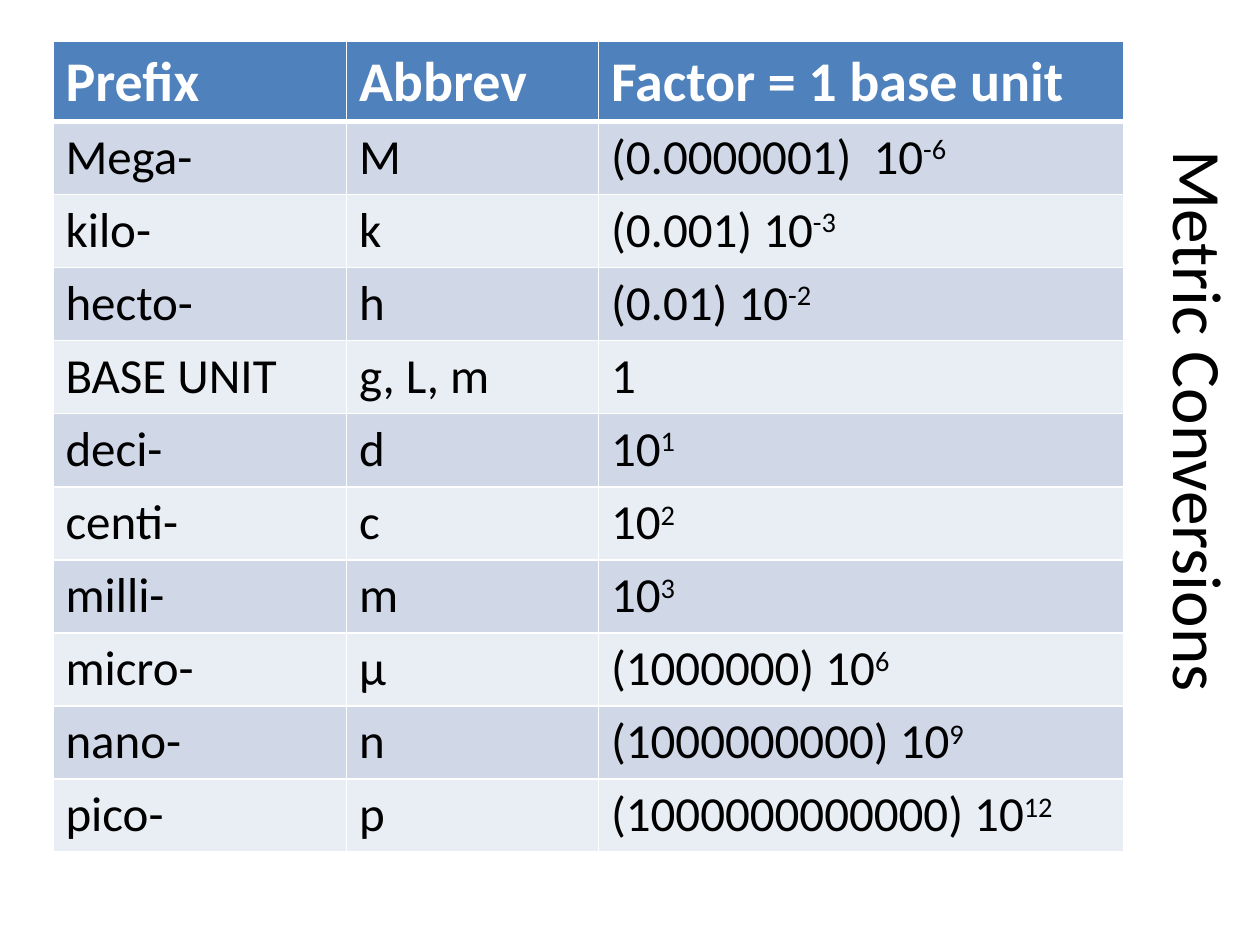
from lxml import etree
from pptx import Presentation
from pptx.dml.color import RGBColor
from pptx.enum.text import MSO_ANCHOR, PP_ALIGN
from pptx.oxml.ns import qn
from pptx.util import Inches, Pt

MIDDLE = MSO_ANCHOR.MIDDLE
CENTER = PP_ALIGN.CENTER
FONT = "Calibri"
COLORS = {
    "text": "000000",
    "header text": "FFFFFF",
    "header": "4F81BD",
    "odd row": "D0D8E8",
    "even row": "E9EDF4",
    "border": "FFFFFF",
}
HEADER_FORMAT = {"size": Pt(32), "bold": True}
BODY_FORMAT = {"size": Pt(28), "bold": False}
TITLE_FORMAT = {"size": Pt(39.6), "bold": False}
COLUMN_WIDTHS = [2.33, 2, 4.17]
HEADER_HEIGHT, ROW_HEIGHT = 0.63, 0.58

# Prefix, abbreviation, factor, exponent
ROWS = [
    ("Prefix", "Abbrev", "Factor = 1 base unit", ""),
    ("Mega-", "M", "(0.0000001)  10", "-6"),
    ("kilo-", "k", "(0.001) 10", "-3"),
    ("hecto-", "h", "(0.01) 10", "-2"),
    ("BASE UNIT", "g, L, m", "1", ""),
    ("deci-", "d", "10", "1"),
    ("centi-", "c", "10", "2"),
    ("milli-", "m", "10", "3"),
    ("micro-", "µ", "(1000000) 10", "6"),
    ("nano-", "n", "(1000000000) 10", "9"),
    ("pico-", "p", "(1000000000000) 10", "12"),
]


def add_span(para, text, color, formats):
    span = para.add_run()
    span.text = text
    span.font.name = FONT
    span.font.color.rgb = RGBColor.from_string(COLORS[color])
    for name, value in formats.items():
        setattr(span.font, name, value)
    return span


def add_borders(cell, widths):
    """Draw cell borders; widths maps a side (L, R, T, B) to points."""
    properties = cell._tc.get_or_add_tcPr()
    for side, width in widths.items():
        line = etree.SubElement(properties, qn(f"a:ln{side}"), w=str(Pt(width)))
        fill = etree.SubElement(line, qn("a:solidFill"))
        etree.SubElement(fill, qn("a:srgbClr"), val=COLORS["border"])


deck = Presentation()
deck.slide_width, deck.slide_height = Inches(10), Inches(7.5)
page = deck.slides.add_slide(deck.slide_layouts[6])

title = page.shapes.add_textbox(Inches(5.03), Inches(3.03), Inches(9), Inches(0.62))
title.rotation = 90
title.text_frame.word_wrap = True
title.text_frame.vertical_anchor = MIDDLE
title_para = title.text_frame.paragraphs[0]
title_para.alignment = CENTER
add_span(title_para, "Metric Conversions", "text", TITLE_FORMAT)

table = page.shapes.add_table(
    len(ROWS), len(COLUMN_WIDTHS), Inches(0.42), Inches(0.33),
    Inches(sum(COLUMN_WIDTHS)), Inches(HEADER_HEIGHT + ROW_HEIGHT * (len(ROWS) - 1)),
).table
for column, width in zip(table.columns, COLUMN_WIDTHS):
    column.width = Inches(width)

for row_index, (*texts, exponent) in enumerate(ROWS):
    is_header = row_index == 0
    table.rows[row_index].height = Inches(HEADER_HEIGHT if is_header else ROW_HEIGHT)
    if is_header:
        fill, color, formats = "header", "header text", HEADER_FORMAT
    else:
        fill = "odd row" if row_index % 2 else "even row"
        color, formats = "text", BODY_FORMAT
    borders = {"L": 1, "R": 1, "T": 3 if row_index == 1 else 1, "B": 3 if is_header else 1}

    for column_index, text in enumerate(texts):
        cell = table.cell(row_index, column_index)
        add_borders(cell, borders)
        cell.fill.solid()
        cell.fill.fore_color.rgb = RGBColor.from_string(COLORS[fill])
        add_span(cell.text_frame.paragraphs[0], text, color, formats)
    if exponent:
        span = add_span(cell.text_frame.paragraphs[0], exponent, color, formats)
        span._r.get_or_add_rPr().set("baseline", "30000")

deck.save("out.pptx")
